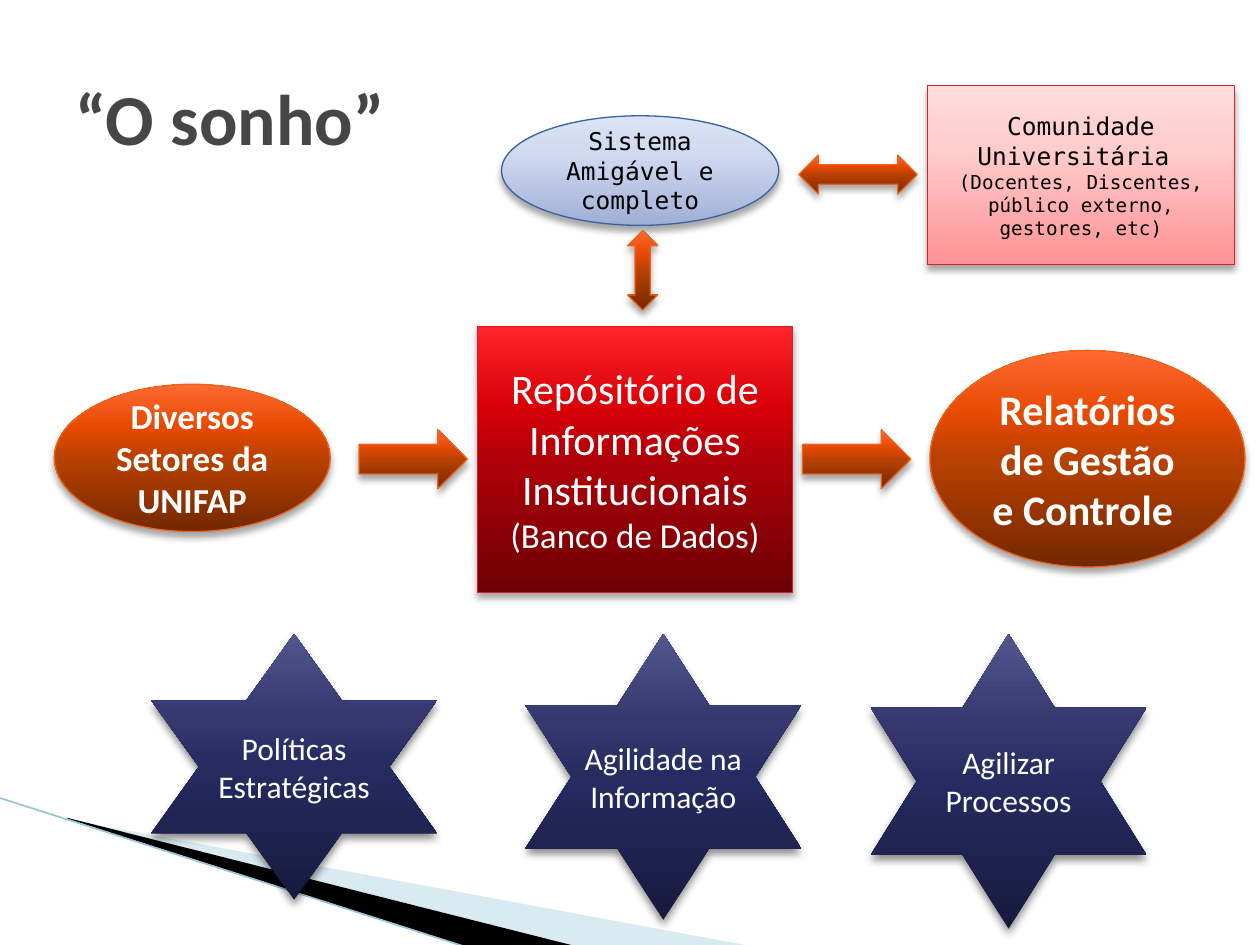
from lxml import etree
from pptx import Presentation
from pptx.dml.color import RGBColor
from pptx.enum.shapes import MSO_CONNECTOR, MSO_SHAPE
from pptx.enum.text import MSO_ANCHOR, PP_ALIGN
from pptx.oxml.ns import qn
from pptx.util import Pt

RECTANGLE = MSO_SHAPE.RECTANGLE
ELLIPSE = MSO_SHAPE.OVAL
STAR = MSO_SHAPE.STAR_6_POINT
RIGHT_ARROW = MSO_SHAPE.RIGHT_ARROW
TWO_WAY_ARROW = MSO_SHAPE.LEFT_RIGHT_ARROW
UP_DOWN_ARROW = MSO_SHAPE.UP_DOWN_ARROW
STRAIGHT = MSO_CONNECTOR.STRAIGHT
CENTER, LEFT = PP_ALIGN.CENTER, PP_ALIGN.LEFT
MIDDLE = MSO_ANCHOR.MIDDLE

SANS, MONO = "Calibri", "DejaVu Sans Mono"
TITLE_ONLY = 5

# Gradient stops run from the bottom of the shape to its top.
ORANGE = {"stops": [(0, "732800"), (50, "B94100"), (70, "E64900"), (100, "FF6933")],
          "outline": "EB641B"}
RED = {"stops": [(0, "6D0005"), (50, "B00008"), (70, "DA0008"), (100, "FF2429")],
       "outline": "DA1F28"}
NAVY = {"stops": [(0, "171A3D"), (50, "262B61"), (70, "353970"), (100, "51568D")],
        "outline": None, "shadow": (45, 5)}
PALE_BLUE = {"stops": [(0, "9FAFD6"), (65, "D0D9EF"), (100, "DCE3F6")],
             "outline": "39639D"}
PINK = {"stops": [(0, "FF9294"), (65, "FFCDCD"), (100, "FFDCDC")],
        "outline": "DA1F28"}


def color(value):
    return RGBColor.from_string(value)


def add_color_xml(parent, value, alpha=None):
    element = etree.SubElement(parent, qn("a:srgbClr"), val=value)
    if alpha is not None:
        etree.SubElement(element, qn("a:alpha"), val=str(alpha * 1000))


def fill_gradient(shape, stops):
    shape.fill.gradient()
    shape.fill.gradient_angle = 90
    stop_list = shape.fill._xPr.find(qn("a:gradFill")).find(qn("a:gsLst"))
    for stop in list(stop_list):
        stop_list.remove(stop)
    for position, value in stops:
        stop = etree.SubElement(stop_list, qn("a:gs"), pos=str(position * 1000))
        add_color_xml(stop, value)


def cast_shadow(shape, alpha, blur, distance=3):
    """Give the shape a black shadow that falls straight down."""
    shape.shadow.inherit = False
    effects = shape._element.spPr.find(qn("a:effectLst"))
    shadow = etree.SubElement(
        effects, qn("a:outerShdw"), blurRad=str(Pt(blur)), dist=str(Pt(distance)),
        dir="5400000", rotWithShape="0")
    add_color_xml(shadow, "000000", alpha)


def add_span(para, text, size=18, font=SANS, ink="FFFFFF", bold=False):
    span = para.add_run()
    span.text = text
    span.font.size = Pt(size)
    span.font.name = font
    span.font.bold = bold
    span.font.color.rgb = color(ink)


def add_node(page, kind, bounds, style, text=None, **text_format):
    """Add a glossy shape; bounds are left, top, width and height in points."""
    shape = page.shapes.add_shape(kind, *map(Pt, bounds))
    fill_gradient(shape, style["stops"])
    if style["outline"]:
        shape.line.color.rgb = color(style["outline"])
        shape.line.width = Pt(0.75)
    else:
        shape.line.fill.background()
    cast_shadow(shape, *style.get("shadow", (35, 4)))
    if text:
        frame = shape.text_frame
        frame.word_wrap = True
        frame.vertical_anchor = MIDDLE
        frame.paragraphs[0].alignment = CENTER
        add_span(frame.paragraphs[0], text, **text_format)
    return shape


def add_wedge(page, points, value, alpha=100):
    corners = [(Pt(x), Pt(y)) for x, y in points]
    builder = page.shapes.build_freeform(*corners[0])
    builder.add_line_segments(corners[1:], close=True)
    wedge = builder.convert_to_shape()
    wedge.fill.solid()
    wedge.fill.fore_color.rgb = color(value)
    if alpha < 100:
        solid = wedge._element.spPr.find(qn("a:solidFill"))
        etree.SubElement(solid[0], qn("a:alpha"), val=str(alpha * 1000))
    wedge.line.fill.background()
    wedge.shadow.inherit = False


def add_line(page, start, end, value, width):
    line = page.shapes.add_connector(STRAIGHT, *map(Pt, start + end))
    line.line.color.rgb = color(value)
    line.line.width = Pt(width)
    etree.SubElement(line._element.spPr, qn("a:effectLst"))


def add_corner_decoration(page):
    add_wedge(page, [(39.6, 468.5), (428.4, 540.5), (328.3, 540.5), (39.6, 468)],
              "A0CBDC", alpha=40)
    add_wedge(page, [(38.2, 467.3), (329, 540.7), (267.8, 541.4), (38.9, 468)],
              "000000")
    add_line(page, (-0.7, 455.8), (267.1, 541.4), "97C5D8", 0.95)


def set_title(page, text):
    title = page.shapes.title
    title.left, title.top, title.width, title.height = map(Pt, (36, 21.6, 648, 90))
    title.text_frame.vertical_anchor = MIDDLE
    para = title.text_frame.paragraphs[0]
    para.alignment = LEFT
    add_span(para, text, size=41, ink="464646", bold=True)


def add_flow(page):
    repository = add_node(page, RECTANGLE, (272.9, 186.5, 180, 151.9), RED,
                          "Repósitório de Informações Institucionais", size=24)
    para = repository.text_frame.add_paragraph()
    para.alignment = CENTER
    add_span(para, "(Banco de Dados)", size=20)
    add_node(page, ELLIPSE, (31, 219.6, 157.7, 84.2), ORANGE,
             "Diversos Setores da UNIFAP", size=20, bold=True)
    add_node(page, ELLIPSE, (531.4, 200.2, 180, 123.8), ORANGE,
             "Relatórios de Gestão e Controle ", size=24, bold=True)
    for left in (205.2, 458.6):
        add_node(page, RIGHT_ARROW, (left, 245.5, 61.9, 33.8), ORANGE)


def add_goals(page):
    goals = [("Políticas Estratégicas", 86.4, 163.4, 151.9),
             ("Agilidade na Informação", 300.2, 157.7, 163.4),
             ("Agilizar Processos", 497.5, 157.7, 168.5)]
    for text, left, width, height in goals:
        add_node(page, STAR, (left, 362.2, width, height), NAVY, text)


def add_users(page):
    add_node(page, ELLIPSE, (286.6, 66.2, 158.4, 62.6), PALE_BLUE,
             "Sistema Amigável e completo", size=14, font=MONO, ink="000000")
    community = add_node(page, RECTANGLE, (529.9, 49, 175.7, 102.2), PINK,
                         "Comunidade Universitária ", size=14, font=MONO, ink="000000")
    para = community.text_frame.paragraphs[0]
    para.add_line_break()
    add_span(para, "(Docentes, Discentes, público externo, gestores, etc)",
             size=11, font=MONO, ink="000000")
    add_node(page, TWO_WAY_ARROW, (456.5, 88.6, 67.7, 22.3), ORANGE)
    add_node(page, UP_DOWN_ARROW, (358.6, 131.8, 17.3, 45.4), ORANGE)


def main():
    deck = Presentation()
    deck.slide_width, deck.slide_height = Pt(720), Pt(540)
    page = deck.slides.add_slide(deck.slide_layouts[TITLE_ONLY])
    add_corner_decoration(page)
    set_title(page, "“O sonho”")
    add_flow(page)
    add_goals(page)
    add_users(page)
    deck.save("out.pptx")


if __name__ == "__main__":
    main()
